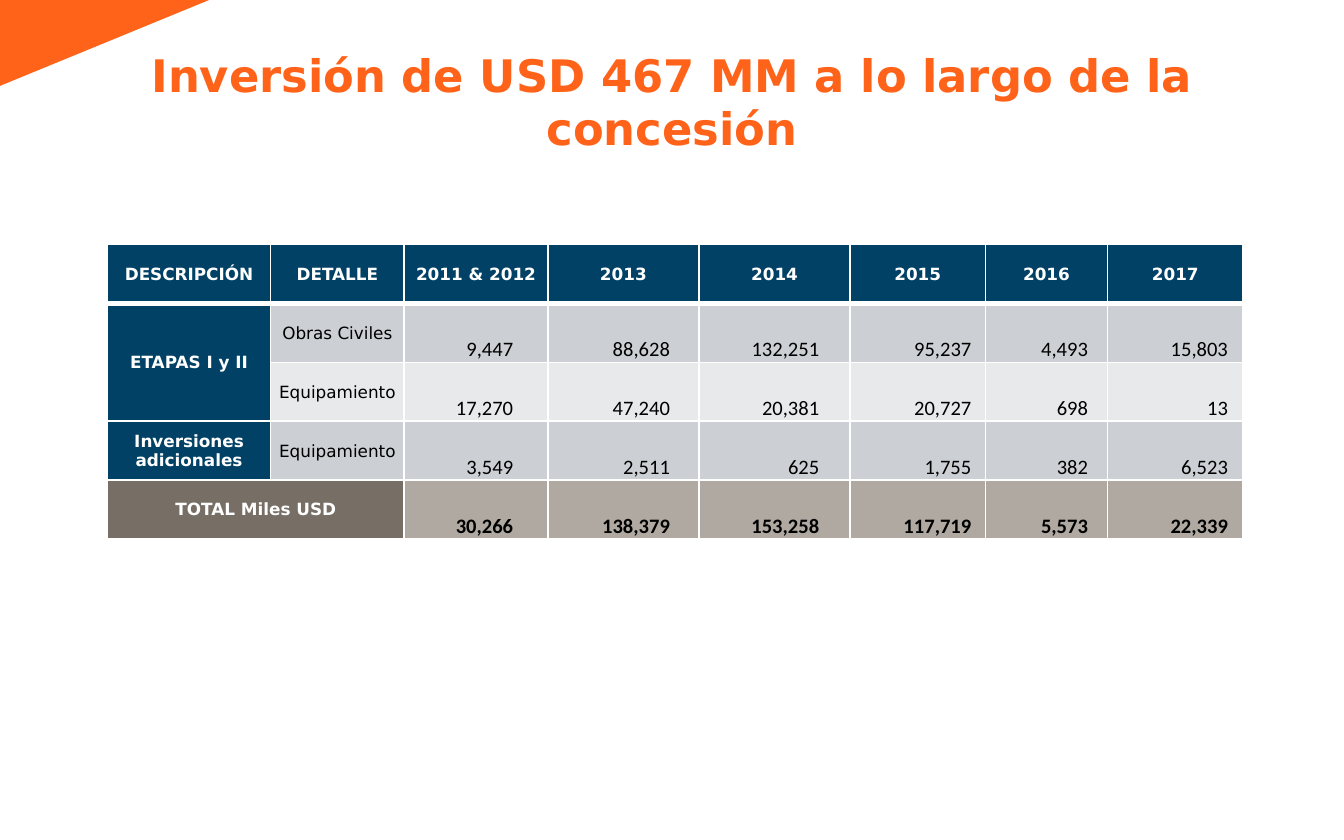
from lxml.etree import SubElement
from pptx import Presentation
from pptx.dml.color import RGBColor
from pptx.enum.shapes import MSO_SHAPE
from pptx.enum.text import MSO_ANCHOR, MSO_AUTO_SIZE, PP_ALIGN
from pptx.oxml.ns import qn
from pptx.util import Pt

ORANGE = RGBColor(0xFF, 0x63, 0x19)
NAVY = RGBColor(0x00, 0x41, 0x65)
GREY = RGBColor(0xCC, 0xCF, 0xD3)
PALE = RGBColor(0xE7, 0xE9, 0xEA)
BROWN = RGBColor(0x77, 0x6F, 0x65)
TAUPE = RGBColor(0xAF, 0xA9, 0xA1)
WHITE = RGBColor(0xFF, 0xFF, 0xFF)
BLACK = RGBColor(0x00, 0x00, 0x00)
SANS, BODY = "DejaVu Sans", "Calibri"

WIDTHS = [87.5, 71.5, 77, 81, 81, 72.5, 65.5, 72.5]
# Right margins of the number columns
MARGINS = [18.5, 15.5, 16.5, 7.5, 10.5, 8]
HIGH = 31.55

ROWS = [
    ["DESCRIPCIÓN", "DETALLE", "2011 & 2012", "2013", "2014", "2015", "2016", "2017"],
    ["ETAPAS I y II", "Obras Civiles", "9,447", "88,628", "132,251", "95,237", "4,493", "15,803"],
    ["", "Equipamiento", "17,270", "47,240", "20,381", "20,727", "698", "13"],
    ["Inversiones adicionales", "Equipamiento", "3,549", "2,511", "625", "1,755", "382", "6,523"],
    ["TOTAL Miles USD", "", "30,266", "138,379", "153,258", "117,719", "5,573", "22,339"],
]
BANDS = [NAVY, GREY, PALE, GREY, TAUPE]


def set_font(para, name, size, color, bold):
    font = para.font
    font.name, font.size, font.bold = name, Pt(size), bold
    font.color.rgb = color
    for run in para.runs:
        run.font.name, run.font.size, run.font.bold = name, Pt(size), bold
        run.font.color.rgb = color


def add_corner(slide):
    shape = slide.shapes.add_shape(
        MSO_SHAPE.RIGHT_TRIANGLE, Pt(33), Pt(-33), Pt(46), Pt(112))
    shape.rotation = 90
    shape.shadow.inherit = False
    shape.fill.solid()
    shape.fill.fore_color.rgb = ORANGE
    shape.line.fill.background()


def set_title(slide, text):
    title = slide.shapes.title
    title.left, title.top, title.width, title.height = Pt(54), Pt(23), Pt(612), Pt(60)
    frame = title.text_frame
    frame.text = text
    frame.word_wrap = True
    frame.auto_size = MSO_AUTO_SIZE.NONE
    frame.vertical_anchor = MSO_ANCHOR.BOTTOM
    frame.margin_left = frame.margin_right = frame.margin_top = frame.margin_bottom = Pt(0)
    para = frame.paragraphs[0]
    para.alignment = PP_ALIGN.CENTER
    set_font(para, SANS, 24, ORANGE, True)


def set_edges(cell, top, bottom):
    props = cell._tc.get_or_add_tcPr()
    for tag, width in (("lnL", 1), ("lnR", 1), ("lnT", top), ("lnB", bottom)):
        line = SubElement(props, qn(f"a:{tag}"), w=str(Pt(width)))
        fill = SubElement(line, qn("a:solidFill"))
        SubElement(fill, qn("a:srgbClr"), val=str(WHITE))


def fill_cell(cell, text, row, col):
    last = row == len(ROWS) - 1
    value = row > 0 and col > 1
    label = row == 0 or col == 0
    # The header is parted from the body by a thick line
    set_edges(cell, 3 if row == 1 else 1, 3 if row == 0 else 1)
    cell.fill.solid()
    if col < 2 and last:
        cell.fill.fore_color.rgb = BROWN
    else:
        cell.fill.fore_color.rgb = NAVY if label else BANDS[row]
    cell.margin_left = cell.margin_right = cell.margin_top = Pt(0.7)
    cell.margin_bottom = Pt(0)
    cell.text_frame.text = text
    para = cell.text_frame.paragraphs[0]
    if value:
        cell.margin_right = Pt(MARGINS[col - 2])
        cell.vertical_anchor = MSO_ANCHOR.BOTTOM
        para.alignment = PP_ALIGN.RIGHT
        set_font(para, BODY, 11, BLACK, last)
    else:
        cell.vertical_anchor = MSO_ANCHOR.MIDDLE
        para.alignment = PP_ALIGN.CENTER
        set_font(para, SANS, 9, WHITE if label else BLACK, label)


def add_grid(slide):
    frame = slide.shapes.add_table(
        len(ROWS), len(WIDTHS), Pt(57.5), Pt(131), Pt(sum(WIDTHS)), Pt(HIGH * len(ROWS)))
    table = frame.table
    table.horz_banding = False
    for col, width in enumerate(WIDTHS):
        table.columns[col].width = Pt(width)
    for row, texts in enumerate(ROWS):
        table.rows[row].height = Pt(HIGH)
        for col, text in enumerate(texts):
            fill_cell(table.cell(row, col), text, row, col)
    table.cell(1, 0).merge(table.cell(2, 0))
    table.cell(4, 0).merge(table.cell(4, 1))


def main():
    deck = Presentation()
    deck.slide_width, deck.slide_height = Pt(720), Pt(450)
    slide = deck.slides.add_slide(deck.slide_layouts[5])
    # Corner and heading
    add_corner(slide)
    set_title(slide, "Inversión de USD 467 MM a lo largo de la concesión")
    # Investment by stage and year
    add_grid(slide)
    deck.save("out.pptx")


if __name__ == "__main__":
    main()
